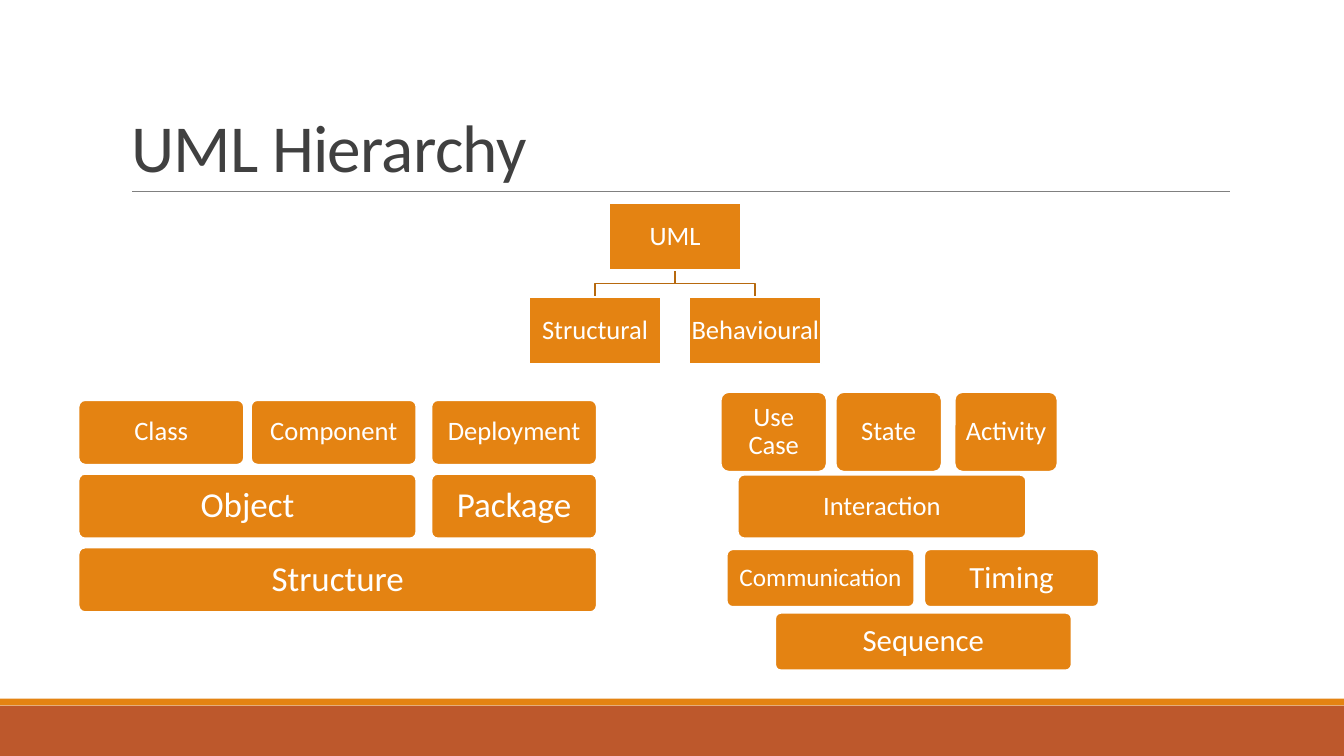
from dataclasses import dataclass

from lxml import etree
from pptx import Presentation
from pptx.dml.color import RGBColor
from pptx.enum.shapes import MSO_CONNECTOR, MSO_SHAPE
from pptx.enum.text import MSO_ANCHOR, MSO_AUTO_SIZE, PP_ALIGN
from pptx.oxml.ns import qn
from pptx.util import Emu, Inches, Pt

RECTANGLE = MSO_SHAPE.RECTANGLE
ROUNDED = MSO_SHAPE.ROUNDED_RECTANGLE
STRAIGHT = MSO_CONNECTOR.STRAIGHT
CENTER, LEFT = PP_ALIGN.CENTER, PP_ALIGN.LEFT
MIDDLE, BOTTOM = MSO_ANCHOR.MIDDLE, MSO_ANCHOR.BOTTOM
NO_AUTOFIT = MSO_AUTO_SIZE.NONE

FONT = "Calibri"
ORANGE, RUST, BRANCH = "E48312", "BD582C", "B7690E"
WHITE, DARK, GRAY = "FFFFFF", "404040", "808080"
WIDTH, HEIGHT = Inches(13.333), Inches(7.5)


@dataclass(frozen=True)
class Box:
    """A labelled box, placed in percent of the slide's width and height."""
    label: str
    left: float
    top: float
    width: float
    height: float
    size: float = 19
    kind: MSO_SHAPE = ROUNDED


# UML tree: a root centred above two children
TREE_CENTER, CHILD_OFFSET = 50.23, 5.96
ROOT_TOP, CHILD_TOP = 26.93, 39.33
NODE_WIDTH, NODE_HEIGHT = 9.8, 8.75


def node(label: str, center: float, top: float) -> Box:
    return Box(label, center - NODE_WIDTH / 2, top, NODE_WIDTH, NODE_HEIGHT, kind=RECTANGLE)


TREE = [
    node("UML", TREE_CENTER, ROOT_TOP),
    node("Structural", TREE_CENTER - CHILD_OFFSET, CHILD_TOP),
    node("Behavioural", TREE_CENTER + CHILD_OFFSET, CHILD_TOP),
]

# Structural diagrams: three columns, three rows
COLUMNS = [5.85, 18.68, 32.1]
COLUMN_WIDTH = 12.3
ROWS = [52.93 + 9.75 * row for row in range(3)]


def structural(label: str, row: int, first: int, last: int, size: float) -> Box:
    width = COLUMNS[last] + COLUMN_WIDTH - COLUMNS[first]
    return Box(label, COLUMNS[first], ROWS[row], width, 8.53, size)


STRUCTURAL = [
    structural("Class", 0, 0, 0, 19),
    structural("Component", 0, 1, 1, 19),
    structural("Deployment", 0, 2, 2, 19),
    structural("Object", 1, 0, 1, 25),
    structural("Package", 1, 2, 2, 25),
    structural("Structure", 2, 0, 2, 25),
]

BEHAVIOURAL = [
    Box("Use Case", 53.63, 51.87, 7.88, 10.53),
    Box("State", 62.18, 51.87, 7.88, 10.53),
    Box("Activity", 71.03, 51.87, 7.65, 10.53),
    Box("Interaction", 54.9, 62.8, 21.45, 8.4),
    Box("Communication", 54.08, 72.67, 13.95, 7.6, 18),
    Box("Timing", 68.78, 72.67, 12.98, 7.6, 22),
    Box("Sequence", 57.68, 81.07, 22.05, 7.6, 22),
]


def across(percent: float) -> Emu:
    return Emu(round(WIDTH * percent / 100))


def down(percent: float) -> Emu:
    return Emu(round(HEIGHT * percent / 100))


def color(value: str) -> RGBColor:
    return RGBColor.from_string(value)


def set_line(shape, value: str, width: float) -> None:
    shape.line.color.rgb = color(value)
    shape.line.width = Pt(width)


def add_filled(slide, kind: MSO_SHAPE, left: float, top: float,
               width: float, height: float, fill: str):
    shape = slide.shapes.add_shape(kind, across(left), down(top), across(width), down(height))
    shape.shadow.inherit = False
    shape.fill.solid()
    shape.fill.fore_color.rgb = color(fill)
    shape.line.fill.background()
    return shape


def write(frame, text: str, size: float, value: str, align: PP_ALIGN, spacing: float):
    paragraph = frame.paragraphs[0]
    paragraph.alignment = align
    paragraph.line_spacing = spacing
    run = paragraph.add_run()
    run.text = text
    run.font.name = FONT
    run.font.size = Pt(size)
    run.font.color.rgb = color(value)
    return run


def add_box(slide, box: Box) -> None:
    shape = add_filled(slide, box.kind, box.left, box.top, box.width, box.height, ORANGE)
    set_line(shape, WHITE, 1.25)
    inset = Inches(0.01)
    if box.kind == ROUNDED:
        shape.adjustments[0] = 0.1
        inset = Inches(0.05)
    frame = shape.text_frame
    frame.word_wrap = True
    frame.vertical_anchor = MIDDLE
    frame.margin_left = frame.margin_right = inset
    frame.margin_top = frame.margin_bottom = inset
    write(frame, box.label, box.size, WHITE, CENTER, 0.9)


def add_branch(slide, child_center: float) -> None:
    """Draw the elbow from the root's lower edge to a child's upper edge."""
    start = ROOT_TOP + NODE_HEIGHT
    middle = (start + CHILD_TOP) / 2
    points = [(TREE_CENTER, middle), (child_center, middle), (child_center, CHILD_TOP)]
    builder = slide.shapes.build_freeform(across(TREE_CENTER), down(start))
    builder.add_line_segments([(across(x), down(y)) for x, y in points], close=False)
    branch = builder.convert_to_shape()
    branch.shadow.inherit = False
    branch.fill.background()
    set_line(branch, BRANCH, 1.25)


def add_title(slide, text: str) -> None:
    title = slide.shapes.title
    title.left, title.top = across(9), down(4.13)
    title.width, title.height = across(82.5), down(21.2)
    frame = title.text_frame
    frame.word_wrap = True
    frame.auto_size = NO_AUTOFIT
    frame.vertical_anchor = BOTTOM
    run = write(frame, text, 48, DARK, LEFT, 0.85)
    run.font._element.set("spc", "-50")


def add_rule(slide) -> None:
    rule = slide.shapes.add_connector(STRAIGHT, across(9.83), down(25.33),
                                      across(91.55), down(25.33))
    set_line(rule, GRAY, 0.5)
    etree.SubElement(rule._element.spPr, qn("a:effectLst"))


def main() -> None:
    presentation = Presentation()
    presentation.slide_width, presentation.slide_height = WIDTH, HEIGHT
    slide = presentation.slides.add_slide(presentation.slide_layouts[5])
    add_filled(slide, RECTANGLE, 0, 93.33, 100, 6.67, RUST)
    add_filled(slide, RECTANGLE, 0, 92.4, 100, 0.9, ORANGE)
    add_rule(slide)
    add_title(slide, "UML Hierarchy")
    for side in (1, -1):
        add_branch(slide, TREE_CENTER + side * CHILD_OFFSET)
    for box in TREE + STRUCTURAL + BEHAVIOURAL:
        add_box(slide, box)
    presentation.save("out.pptx")


if __name__ == "__main__":
    main()
